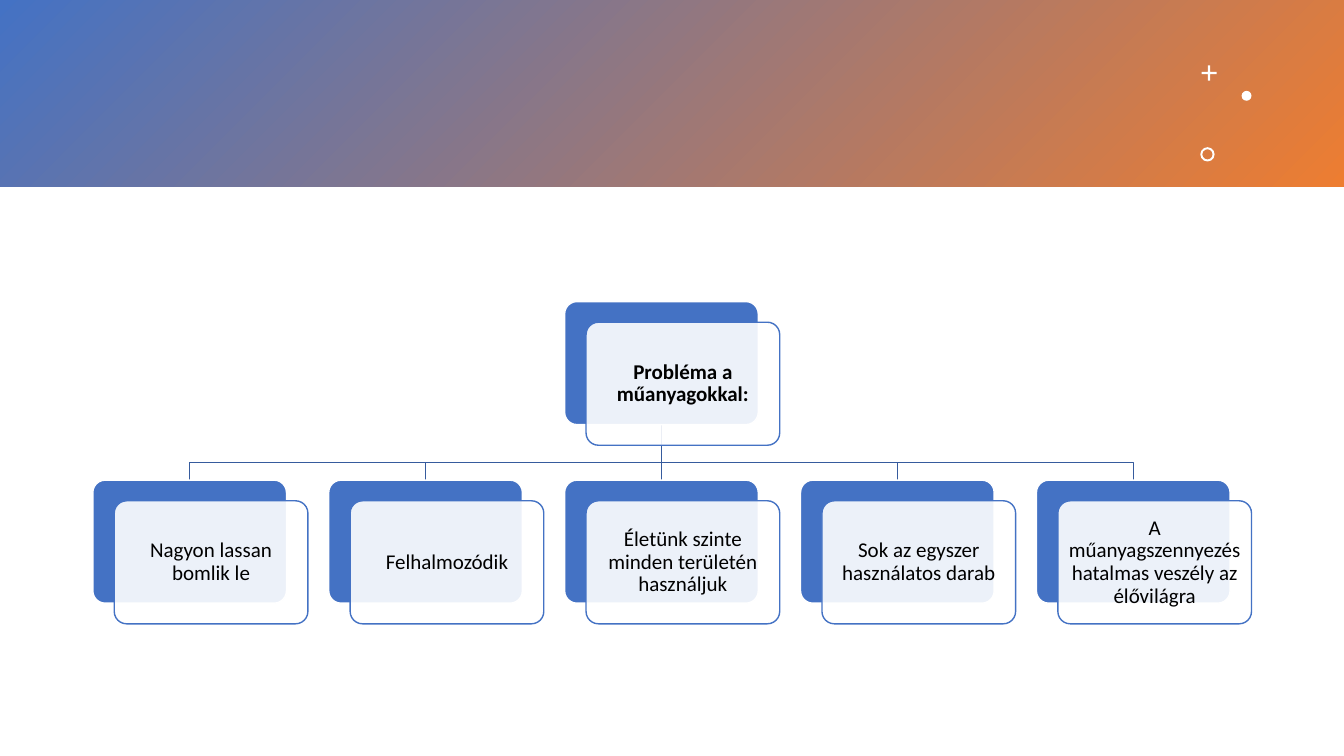
"""Build a slide with a chart of the problems caused by plastics."""
from dataclasses import dataclass

from lxml.etree import SubElement
from pptx import Presentation
from pptx.dml.color import RGBColor
from pptx.enum.shapes import MSO_CONNECTOR, MSO_SHAPE
from pptx.enum.text import MSO_ANCHOR, PP_ALIGN
from pptx.oxml.ns import qn
from pptx.util import Cm, Pt


@dataclass(frozen=True)
class Theme:
    """Colours, font and type size of the slide."""
    blue: RGBColor = RGBColor(0x44, 0x72, 0xC4)
    orange: RGBColor = RGBColor(0xED, 0x7D, 0x31)
    branch: RGBColor = RGBColor(0x36, 0x5B, 0x9D)
    white: RGBColor = RGBColor(0xFF, 0xFF, 0xFF)
    black: RGBColor = RGBColor(0, 0, 0)
    font: str = "Calibri"
    size: Pt = Pt(15)
    line: Pt = Pt(1)


THEME = Theme()
SLIDE_WIDTH, SLIDE_HEIGHT = Cm(33.87), Cm(19.05)
CARD_WIDTH, CARD_HEIGHT = Cm(4.88), Cm(3.1)
CARD_SHIFT_X, CARD_SHIFT_Y = Cm(0.54), Cm(0.52)
FIRST_LEFT, COLUMN_STEP = Cm(2.34), Cm(5.945)
ROOT_TOP, CHILD_TOP, BUS_TOP = Cm(7.6), Cm(12.1), Cm(11.66)
ROOT_BOTTOM = ROOT_TOP + CARD_HEIGHT
ROOT_TEXT = "Probléma a műanyagokkal:"
PROBLEMS = [
    "Nagyon lassan bomlik le",
    "Felhalmozódik",
    "Életünk szinte minden területén használjuk",
    "Sok az egyszer használatos darab",
    "A műanyagszennyezés hatalmas veszély az élővilágra",
]
ROOT_COLUMN = len(PROBLEMS) // 2


def column_left(column):
    """Return the left edge of a column of cards."""
    return FIRST_LEFT + column * COLUMN_STEP


def column_middle(column):
    """Return the horizontal middle of a column's back card."""
    return column_left(column) + CARD_WIDTH // 2


def add_plain_shape(slide, kind, left, top, width, height, fill, line=None, adjustment=None):
    """Add a preset shape with a solid fill and an optional outline."""
    shape = slide.shapes.add_shape(kind, left, top, width, height)
    shape.shadow.inherit = False
    shape.fill.solid()
    shape.fill.fore_color.rgb = fill
    if line is None:
        shape.line.fill.background()
    else:
        shape.line.color.rgb = line
        shape.line.width = THEME.line
    if adjustment is not None:
        shape.adjustments[0] = adjustment
    return shape


def add_banner(slide):
    """Add the gradient band with its three small ornaments."""
    banner = add_plain_shape(slide, MSO_SHAPE.RECTANGLE, 0, 0, SLIDE_WIDTH, Cm(4.7), THEME.blue)
    banner.fill.gradient()
    banner.fill.gradient_angle = 315
    for stop, position, colour in zip(banner.fill.gradient_stops, (0, 1), (THEME.blue, THEME.orange)):
        stop.position = position
        stop.color.rgb = colour
    ornaments = [
        (MSO_SHAPE.CROSS, 30.28, 1.65, 0.38, 0.43),
        (MSO_SHAPE.OVAL, 31.29, 2.29, 0.25, None),
        (MSO_SHAPE.DONUT, 30.25, 3.71, 0.36, 0.14),
    ]
    for kind, left, top, size, adjustment in ornaments:
        add_plain_shape(slide, kind, Cm(left), Cm(top), Cm(size), Cm(size),
                        THEME.white, adjustment=adjustment)


def add_elbow(slide, column):
    """Add the bent branch from the root card to a column."""
    start, end = column_middle(ROOT_COLUMN), column_middle(column)
    builder = slide.shapes.build_freeform(start, ROOT_BOTTOM)
    builder.add_line_segments([(start, BUS_TOP), (end, BUS_TOP), (end, CHILD_TOP)], close=False)
    elbow = builder.convert_to_shape()
    elbow.shadow.inherit = False
    elbow.fill.background()
    elbow.line.color.rgb = THEME.branch
    elbow.line.width = THEME.line


def add_trunk(slide):
    """Add the straight branch below the root card."""
    middle = column_middle(ROOT_COLUMN)
    trunk = slide.shapes.add_connector(MSO_CONNECTOR.STRAIGHT, middle, ROOT_BOTTOM, middle, CHILD_TOP)
    trunk.line.color.rgb = THEME.branch
    trunk.line.width = THEME.line
    SubElement(trunk._element.spPr, qn("a:effectLst"))
    return trunk


def add_card(slide, column, top, text, bold=False):
    """Add a blue card with a translucent text card and return the blue one."""
    left = column_left(column)
    back = add_plain_shape(slide, MSO_SHAPE.ROUNDED_RECTANGLE, left, top, CARD_WIDTH, CARD_HEIGHT,
                           THEME.blue, THEME.white, 0.1)
    front = add_plain_shape(slide, MSO_SHAPE.ROUNDED_RECTANGLE, left + CARD_SHIFT_X,
                            top + CARD_SHIFT_Y, CARD_WIDTH, CARD_HEIGHT,
                            THEME.white, THEME.blue, 0.1)
    colour = front._element.spPr.find(qn("a:solidFill"))[0]
    SubElement(colour, qn("a:alpha"), val="90000")
    frame = front.text_frame
    frame.word_wrap = True
    frame.vertical_anchor = MSO_ANCHOR.MIDDLE
    frame.margin_left = frame.margin_right = frame.margin_top = frame.margin_bottom = Cm(0.15)
    paragraph = frame.paragraphs[0]
    paragraph.text = text
    paragraph.alignment = PP_ALIGN.CENTER
    paragraph.line_spacing = 0.9
    paragraph.font.name = THEME.font
    paragraph.font.size = THEME.size
    paragraph.font.bold = bold
    paragraph.font.color.rgb = THEME.black
    return back


def main():
    """Build and save the presentation."""
    presentation = Presentation()
    presentation.slide_width, presentation.slide_height = SLIDE_WIDTH, SLIDE_HEIGHT
    slide = presentation.slides.add_slide(presentation.slide_layouts[6])
    add_banner(slide)
    for column in range(len(PROBLEMS)):
        if column != ROOT_COLUMN:
            add_elbow(slide, column)
    trunk = add_trunk(slide)
    root = add_card(slide, ROOT_COLUMN, ROOT_TOP, ROOT_TEXT, bold=True)
    children = [add_card(slide, column, CHILD_TOP, text) for column, text in enumerate(PROBLEMS)]
    trunk.begin_connect(root, 2)
    trunk.end_connect(children[ROOT_COLUMN], 0)
    presentation.save("out.pptx")


if __name__ == "__main__":
    main()
